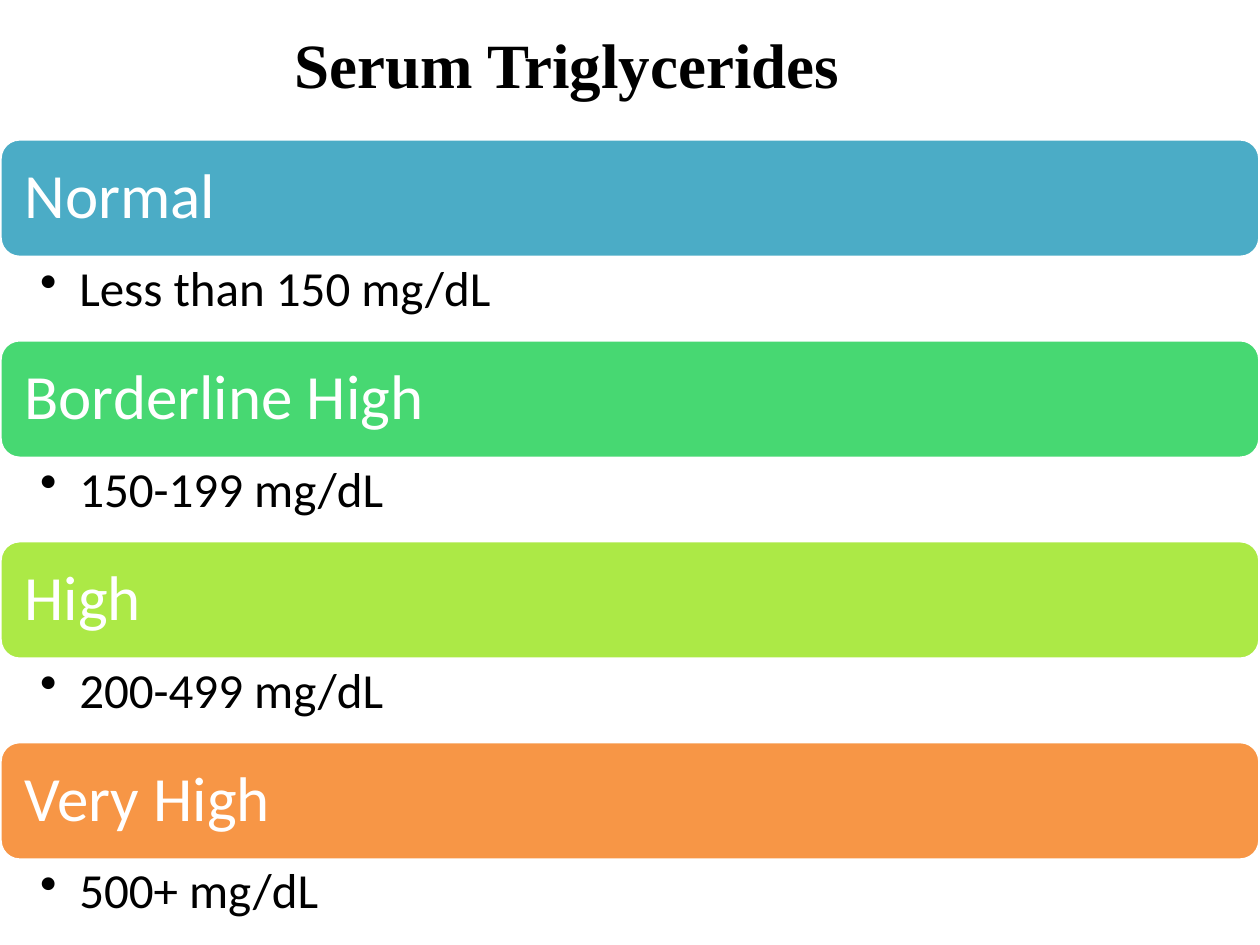
"""Build a slide listing the serum triglyceride categories and their ranges."""
from dataclasses import dataclass

from lxml.etree import SubElement
from pptx import Presentation
from pptx.dml.color import RGBColor as Rgb
from pptx.enum.shapes import MSO_SHAPE as Shape
from pptx.enum.text import MSO_ANCHOR as Anchor, PP_ALIGN as Align
from pptx.oxml.ns import qn
from pptx.util import Cm, Pt


@dataclass(frozen=True)
class Theme:
    title_font: str = "Times New Roman"
    body_font: str = "Calibri"
    heading_size: Pt = Pt(36)
    range_size: Pt = Pt(28)
    dark: Rgb = Rgb(0, 0, 0)
    light: Rgb = Rgb(255, 255, 255)
    blue: Rgb = Rgb.from_string("4BACC6")
    green: Rgb = Rgb.from_string("47D872")
    lime: Rgb = Rgb.from_string("ACE946")
    orange: Rgb = Rgb.from_string("F79646")


def style(paragraph, font_name, size, color, bold=False):
    font = paragraph.font
    font.name, font.size, font.bold = font_name, size, bold
    font.color.rgb = color


def set_insets(frame, left, top, right, bottom):
    frame.margin_left, frame.margin_top = Cm(left), Cm(top)
    frame.margin_right, frame.margin_bottom = Cm(right), Cm(bottom)
    frame.word_wrap = True


theme = Theme()
categories = [
    ("Normal", "Less than 150 mg/dL", theme.blue),
    ("Borderline High", "150-199 mg/dL", theme.green),
    ("High", "200-499 mg/dL", theme.lime),
    ("Very High", "500+ mg/dL", theme.orange),
]
first_top, band_height, range_height = Cm(2.8), Cm(2.39), Cm(1.66)
step = band_height + range_height

deck = Presentation()
deck.slide_width, deck.slide_height = Cm(25.4), Cm(19.05)
slide = deck.slides.add_slide(deck.slide_layouts[5])

title = slide.shapes.title
title.left, title.top, title.width, title.height = Cm(0), Cm(0), Cm(22.86), Cm(2.57)
title.text_frame.text = "Serum Triglycerides"
title.text_frame.vertical_anchor = Anchor.MIDDLE
heading = title.text_frame.paragraphs[0]
heading.alignment = Align.CENTER
style(heading, theme.title_font, theme.heading_size, theme.dark, bold=True)

for row, (category, level_range, color) in enumerate(categories):
    top = first_top + row * step
    band = slide.shapes.add_shape(
        Shape.ROUNDED_RECTANGLE, 0, top, deck.slide_width, band_height)
    band.shadow.inherit = False
    band.fill.solid()
    band.fill.fore_color.rgb = color
    band.line.color.rgb = theme.light
    band.line.width = Pt(2)
    band.text_frame.text = category
    band.text_frame.vertical_anchor = Anchor.MIDDLE
    set_insets(band.text_frame, 0.38, 0.38, 0.38, 0.38)
    label = band.text_frame.paragraphs[0]
    label.alignment = Align.LEFT
    label.line_spacing = 0.9
    style(label, theme.body_font, theme.heading_size, theme.light)

    details = slide.shapes.add_textbox(
        0, top + band_height, deck.slide_width, range_height).text_frame
    details.text = level_range
    set_insets(details, 0.81, 0.13, 0.71, 0.13)
    bullet = details.paragraphs[0]
    bullet.level = 1
    bullet.line_spacing = 0.9
    style(bullet, theme.body_font, theme.range_size, theme.dark)
    properties = bullet._p.get_or_add_pPr()
    properties.set("marL", str(Cm(0.79)))
    properties.set("indent", str(-Cm(0.79)))
    marker = SubElement(properties, qn("a:buChar"), char="•")
    properties.find(qn("a:defRPr")).addprevious(marker)

deck.save("out.pptx")
